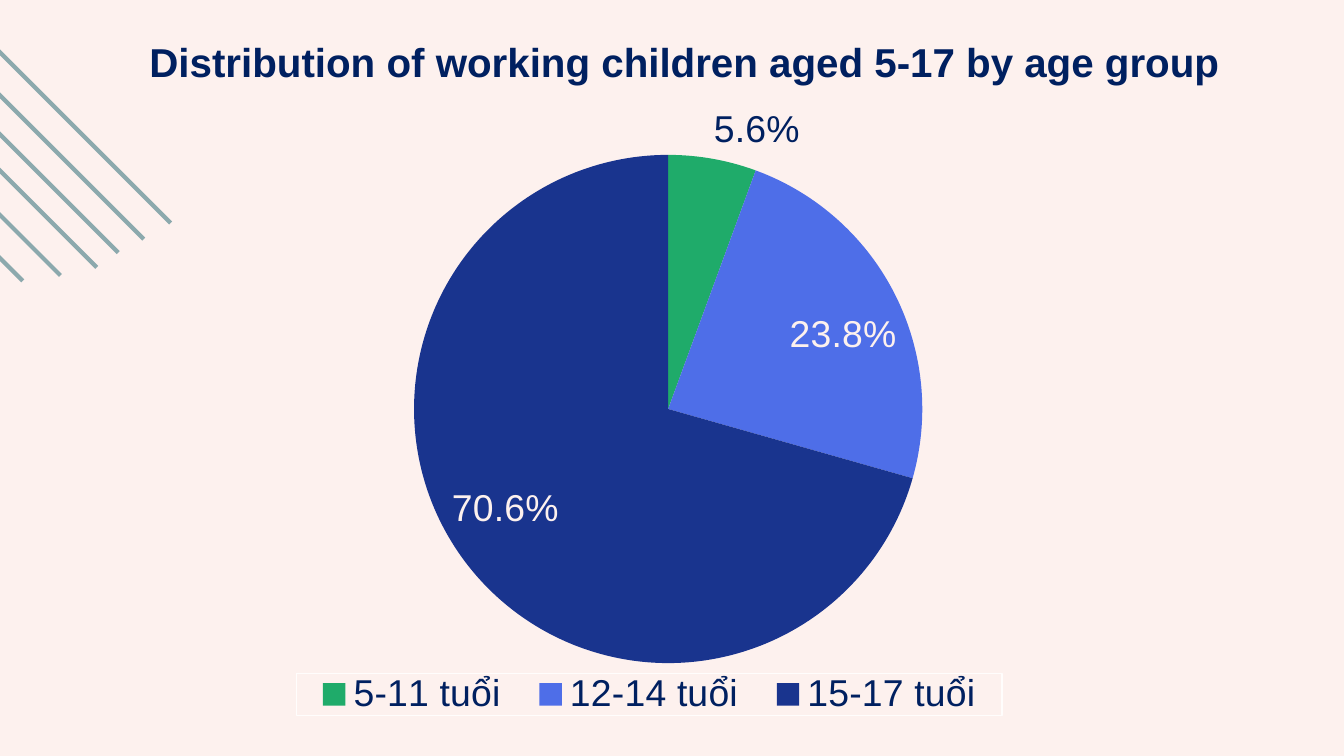
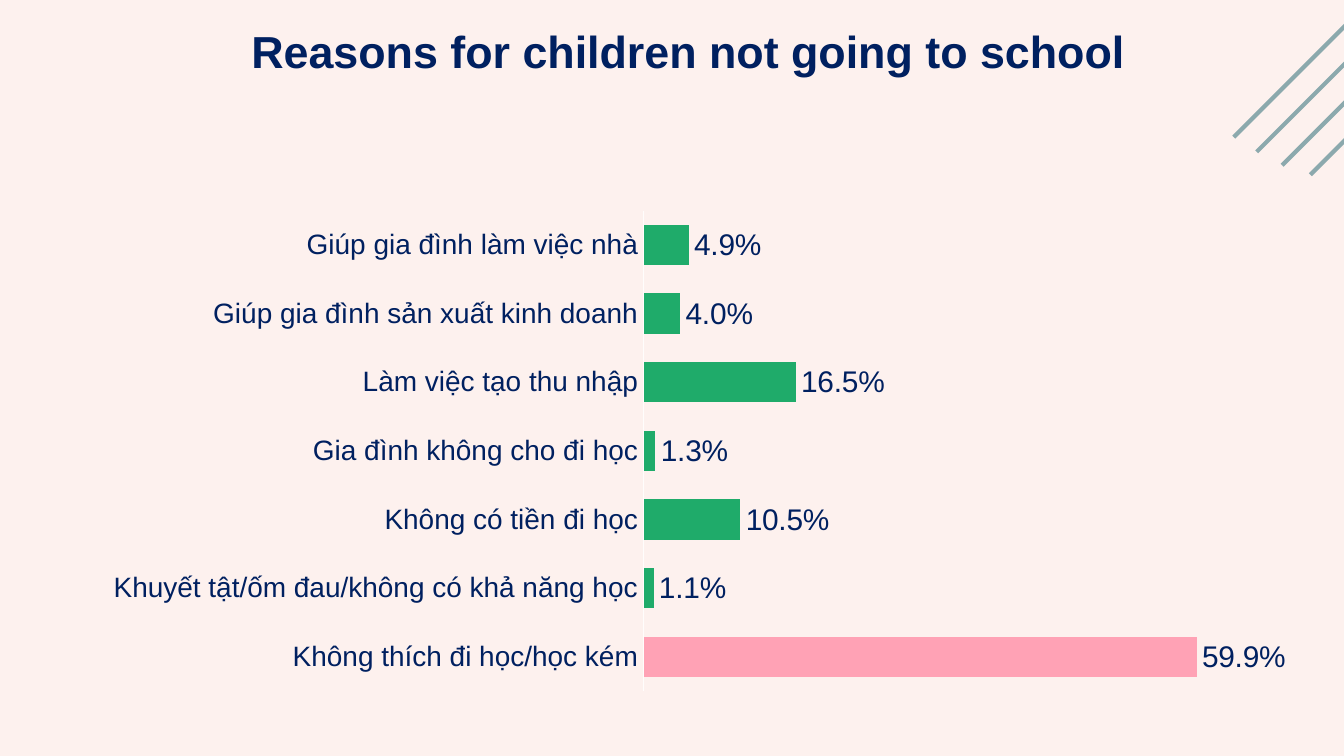
from lxml import etree
from pptx import Presentation
from pptx.chart.data import CategoryChartData
from pptx.dml.color import RGBColor
from pptx.enum import chart as kinds, shapes, text
from pptx.oxml import ns
from pptx.util import Inches, Pt

CREAM = RGBColor(0xFD, 0xF1, 0xEE)
NAVY = RGBColor(0x00, 0x20, 0x60)
SAGE = RGBColor(0x8C, 0xA9, 0xAD)
GREEN = RGBColor(0x1F, 0xAB, 0x6A)
BLUE = RGBColor(0x4E, 0x6E, 0xE8)
INDIGO = RGBColor(0x19, 0x34, 0x8E)
PINK = RGBColor(0xFF, 0xA2, 0xB5)
WHITE = RGBColor(0xFF, 0xFD, 0xFC)
FONT = "Arial"
WIDTH = Inches(10)
HEIGHT = WIDTH * 9 // 16

STRIPE_REACH = (2.82, 2.75, 2.66, 2.56, 2.38, 2.17)

# Boxes are in inches; plot and legend frames are percentages of the chart.
AGES = {
    "title": "Distribution of working children aged 5-17 by age group",
    "title_size": 21.6,
    "title_box": (0.57, 0.25, 9.05, 0.36),
    "stripe_side": -1,
    "stripe_tips": [(1.27, 1.66), (1.07, 1.78), (0.88, 1.88),
                    (0.72, 1.99), (0.45, 2.05), (0.17, 2.09)],
    "chart_box": (1.6, 0.77, 6.67, 4.67),
    "plot": (22.2, 8.2, 56.7, 81),
    "legend": (9.1, 90.8, 78.7, 6.7),
    "values": [("5-11 tuổi", 5.6), ("12-14 tuổi", 23.8), ("15-17 tuổi", 70.6)],
    "colors": [GREEN, BLUE, INDIGO],
}
REASONS = {
    "title": "Reasons for children not going to school",
    "title_size": 24,
    "title_box": (0.47, 0.19, 9.3, 0.39),
    "stripe_side": 1,
    "stripe_tips": [(9.18, 1.02), (9.35, 1.13), (9.54, 1.23), (9.75, 1.3)],
    "chart_box": (0.47, 1.38, 9.13, 3.9),
    "plot": (47.3, 4.8, 52.7, 91.7),
    "values": [
        ("Không thích đi học/học kém", 0.599),
        ("Khuyết tật/ốm đau/không có khả năng học", 0.011),
        ("Không có tiền đi học", 0.105),
        ("Gia đình không cho đi học", 0.013),
        ("Làm việc tạo thu nhập", 0.165),
        ("Giúp gia đình sản xuất kinh doanh", 0.04),
        ("Giúp gia đình làm việc nhà", 0.049),
    ],
}


def set_all(target, **values):
    for name, value in values.items():
        setattr(target, name, value)


def style_font(font, size, color, bold=False):
    set_all(font, name=FONT, size=Pt(size), bold=bold)
    font.color.rgb = color


def paint(part, color):
    part.format.fill.solid()
    part.format.fill.fore_color.rgb = color


def place(element, index, frame, inner=False):
    """Fix a chart part at percentages (x, y, w, h) of the chart's size."""
    for old in element.findall(ns.qn("c:layout")):
        element.remove(old)
    layout = etree.Element(ns.qn("c:layout"))
    manual = etree.SubElement(layout, ns.qn("c:manualLayout"))
    settings = [("layoutTarget", "inner")] if inner else []
    settings += [("xMode", "edge"), ("yMode", "edge")]
    settings += [(tag, f"{share / 100:.3f}") for tag, share in zip("xywh", frame)]
    for tag, value in settings:
        etree.SubElement(manual, ns.qn("c:" + tag), val=value)
    element.insert(index, layout)


def add_page(deck, content):
    page = deck.slides.add_slide(deck.slide_layouts[6])
    page.background.fill.solid()
    page.background.fill.fore_color.rgb = CREAM

    for (x, y), reach in zip(content["stripe_tips"], STRIPE_REACH):
        ends = (x, y, x + content["stripe_side"] * reach, y - reach)
        stripe = page.shapes.add_connector(
            shapes.MSO_CONNECTOR.STRAIGHT, *map(Inches, ends))
        stripe.line.color.rgb = SAGE
        stripe.line.width = Pt(2.25)
        etree.SubElement(stripe._element.spPr, ns.qn("a:effectLst"))

    frame = page.shapes.add_textbox(*map(Inches, content["title_box"])).text_frame
    set_all(frame, word_wrap=True, auto_size=text.MSO_AUTO_SIZE.SHAPE_TO_FIT_TEXT,
            margin_left=0, margin_top=0, margin_right=0, margin_bottom=0)
    para = frame.paragraphs[0]
    set_all(para, alignment=text.PP_ALIGN.CENTER, line_spacing=Pt(27.7))
    span = para.add_run()
    span.text = content["title"]
    style_font(span.font, content["title_size"], NAVY, bold=True)
    return page


def add_chart(page, content, kind, number_format):
    data = CategoryChartData(number_format=number_format)
    names, values = zip(*content["values"])
    data.categories = names
    data.add_series("Series 1", values)
    box = map(Inches, content["chart_box"])
    chart = page.shapes.add_chart(kind, *box, data).chart
    set_all(chart, has_title=False, has_legend=False)
    style_font(chart.font, 10, NAVY)
    place(chart._chartSpace.chart.plotArea, 0, content["plot"], inner=True)
    return chart


def add_age_pie(page):
    chart = add_chart(page, AGES, kinds.XL_CHART_TYPE.PIE, "General")
    series = chart.plots[0].series[0]
    for index, color in enumerate(AGES["colors"]):
        paint(series.points[index], color)

    best_fit = kinds.XL_LABEL_POSITION.BEST_FIT
    labels = series.data_labels
    set_all(labels, show_value=False, show_percentage=True, position=best_fit,
            number_format="0.0%", number_format_is_linked=False)
    style_font(labels.font, 20, CREAM)

    # The narrow slice has its label outside, so it needs dark text.
    narrow = series.points[0].data_label
    style_font(narrow.font, 20, NAVY)
    narrow.position = best_fit
    label = labels._element.find(ns.qn("c:dLbl"))
    label.find(ns.qn("c:showVal")).set("val", "0")
    label.find(ns.qn("c:showPercent")).set("val", "1")
    label.insert(1, etree.Element(
        ns.qn("c:numFmt"), formatCode="0.0%", sourceLinked="0"))

    chart.has_legend = True
    legend = chart.legend
    set_all(legend, position=kinds.XL_LEGEND_POSITION.BOTTOM,
            include_in_layout=False)
    style_font(legend.font, 20, NAVY)
    place(legend._element, 1, AGES["legend"])
    border = etree.Element(ns.qn("c:spPr"))
    line = etree.SubElement(border, ns.qn("a:ln"), w=str(Pt(0.75)))
    fill = etree.SubElement(line, ns.qn("a:solidFill"))
    etree.SubElement(fill, ns.qn("a:srgbClr"), val=str(WHITE))
    legend._element.find(ns.qn("c:txPr")).addprevious(border)


def add_reason_bars(page):
    chart = add_chart(page, REASONS, kinds.XL_CHART_TYPE.BAR_CLUSTERED, "0.0%")
    style_font(chart.font, 10, CREAM)
    plot = chart.plots[0]
    set_all(plot, gap_width=70, vary_by_categories=False)
    series = plot.series[0]
    paint(series, GREEN)
    paint(series.points[0], PINK)

    labels = series.data_labels
    set_all(labels, show_value=True, number_format="0.0%",
            number_format_is_linked=False,
            position=kinds.XL_LABEL_POSITION.OUTSIDE_END)
    style_font(labels.font, 16, NAVY)

    set_all(chart.value_axis, visible=False, has_major_gridlines=False,
            minimum_scale=0, maximum_scale=0.7)
    axis = chart.category_axis
    set_all(axis, major_tick_mark=kinds.XL_TICK_MARK.NONE,
            minor_tick_mark=kinds.XL_TICK_MARK.NONE)
    style_font(axis.tick_labels.font, 15, NAVY)
    axis.format.line.color.rgb = WHITE
    axis.format.line.width = Pt(0.75)


def main():
    deck = Presentation()
    set_all(deck, slide_width=WIDTH, slide_height=HEIGHT)
    add_age_pie(add_page(deck, AGES))
    add_reason_bars(add_page(deck, REASONS))
    deck.save("out.pptx")


if __name__ == "__main__":
    main()
